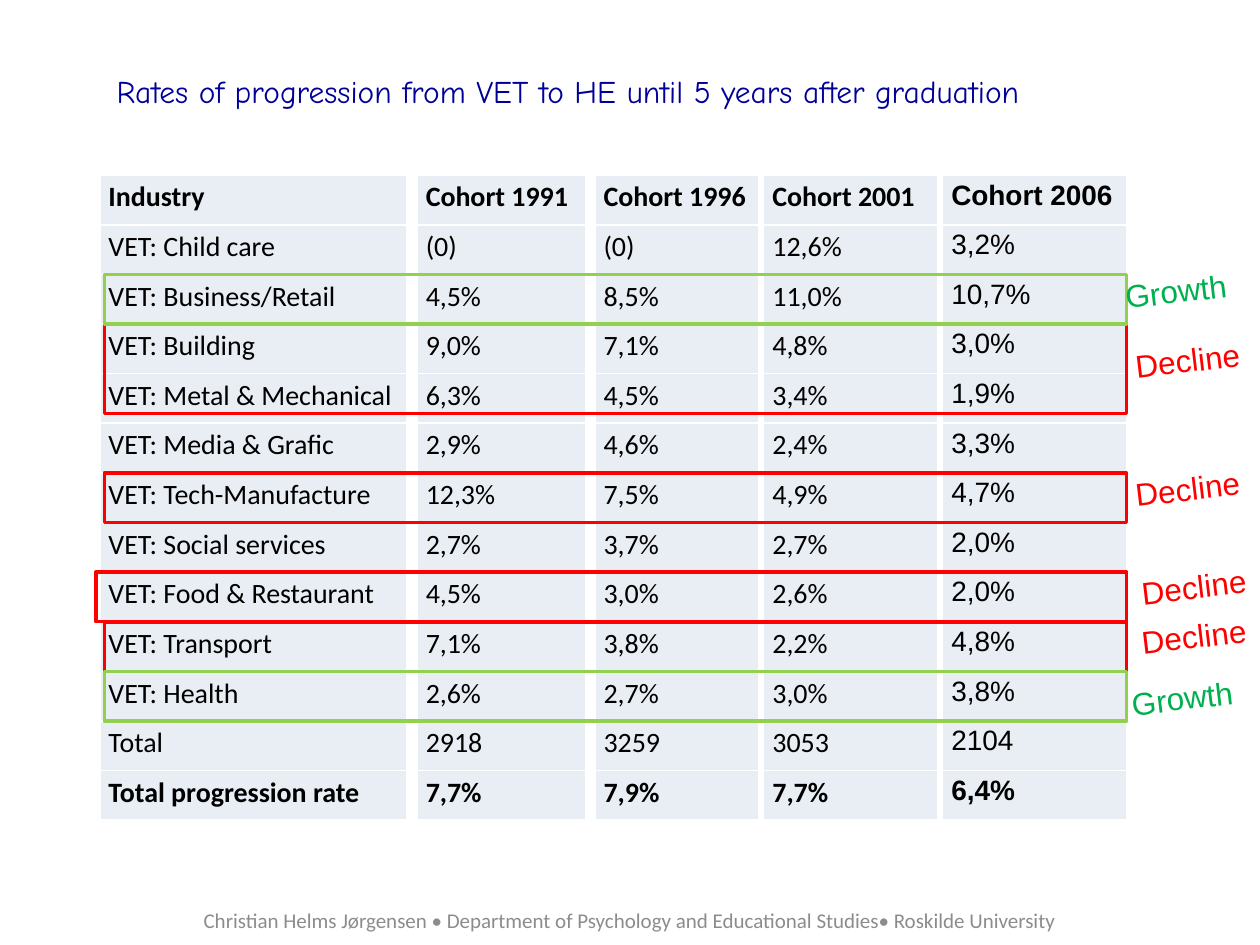
from dataclasses import dataclass

import pptx
import pptx.dml.color
import pptx.enum.shapes
import pptx.enum.text
import pptx.oxml
import pptx.oxml.ns
import pptx.util

Pt = pptx.util.Pt
MSO_ANCHOR = pptx.enum.text.MSO_ANCHOR
PP_ALIGN = pptx.enum.text.PP_ALIGN


@dataclass(frozen=True)
class Theme:
    body_font: str = "Calibri"
    accent_font: str = "Arial"
    title_font: str = "Comic Neue"
    title_size: int = 18
    cell_size: int = 16
    label_size: int = 18
    footer_size: int = 12
    title_color: str = "000099"
    text_color: str = "000000"
    footer_color: str = "8C8C8C"
    cell_fill: str = "E9EDF4"
    border_color: str = "FFFFFF"


THEME = Theme()

# label: (outline colour, label colour, label width)
TRENDS = {
    "Decline": ("FF0000", "FF0000", 80),
    "Growth": ("92D050", "00B050", 78.5),
}

TABLE_TOP, ROW_HEIGHT = 100.1, 28.36
HIGHLIGHT_RIGHT = 643.7

INDUSTRIES = [
    "Industry", "VET: Child care", "VET: Business/Retail", "VET: Building",
    "VET: Metal & Mechanical", "VET: Media & Grafic", "VET: Tech-Manufacture",
    "VET: Social services", "VET: Food & Restaurant", "VET: Transport",
    "VET: Health", "Total", "Total progression rate",
]
COHORT_1991 = ["Cohort 1991", "(0)", "4,5%", "9,0%", "6,3%", "2,9%", "12,3%",
               "2,7%", "4,5%", "7,1%", "2,6%", "2918", "7,7%"]
COHORT_1996 = ["Cohort 1996", "(0)", "8,5%", "7,1%", "4,5%", "4,6%", "7,5%",
               "3,7%", "3,0%", "3,8%", "2,7%", "3259", "7,9%"]
COHORT_2001 = ["Cohort 2001", "12,6%", "11,0%", "4,8%", "3,4%", "2,4%", "4,9%",
               "2,7%", "2,6%", "2,2%", "3,0%", "3053", "7,7%"]
COHORT_2006 = ["Cohort 2006", "3,2%", "10,7%", "3,0%", "1,9%", "3,3%", "4,7%",
               "2,0%", "2,0%", "4,8%", "3,8%", "2104", "6,4%"]

# left, width, font, entries
COLUMNS = [
    (57, 175.7, THEME.body_font, INDUSTRIES),
    (238.3, 96.5, THEME.body_font, COHORT_1991),
    (339.9, 93.6, THEME.body_font, COHORT_1996),
    (436.4, 99.2, THEME.body_font, COHORT_2001),
    (538.6, 105.1, THEME.accent_font, COHORT_2006),
]

# trend, first row, rows spanned, outline left, label left, label top
HIGHLIGHTS = [
    ("Decline", 3, 1.8, 59.6, 641.5, 190.8),
    ("Decline", 6, 1, 59.6, 641.5, 264.2),
    ("Decline", 9, 1, 59.6, 645.1, 348.5),
    ("Decline", 8, 1, 54.8, 645.1, 320.4),
    ("Growth", 2, 1, 59.6, 635.8, 151.2),
    ("Growth", 10, 1, 59.6, 639.4, 383.8),
]


def rgb(color):
    return pptx.dml.color.RGBColor.from_string(color)


def points(box):
    return [Pt(length) for length in box]


def style_runs(paragraph, font_name, size, color, bold=False):
    for run in paragraph.runs:
        run.font.name = font_name
        run.font.size = Pt(size)
        run.font.color.rgb = rgb(color)
        run.font.bold = bold


def add_text(slide, box, text, font_name, size, color, wrap=True):
    shape = slide.shapes.add_textbox(*points(box))
    shape.text_frame.word_wrap = wrap
    shape.text_frame.text = text
    style_runs(shape.text_frame.paragraphs[0], font_name, size, color)
    return shape


def add_title(slide, box):
    add_text(slide, box,
             "Rates of progression from VET to HE until 5 years after graduation",
             THEME.title_font, THEME.title_size, THEME.title_color)


def add_footer(slide, box):
    shape = add_text(
        slide, box,
        "Christian Helms Jørgensen • Department of Psychology and "
        "Educational Studies• Roskilde University",
        THEME.body_font, THEME.footer_size, THEME.footer_color)
    shape.text_frame.vertical_anchor = MSO_ANCHOR.MIDDLE
    shape.text_frame.paragraphs[0].alignment = PP_ALIGN.CENTER


def set_borders(cell, color, width):
    """Line all four sides; call before the fill, which must follow in the XML."""
    properties = cell._tc.get_or_add_tcPr()
    for side in ("lnL", "lnR", "lnT", "lnB"):
        properties.append(pptx.oxml.parse_xml(
            f'<a:{side} {pptx.oxml.ns.nsdecls("a")} w="{Pt(width)}">'
            f'<a:solidFill><a:srgbClr val="{color}"/></a:solidFill></a:{side}>'))


def add_column_table(slide, box, font_name, entries):
    """One single-column table whose first and last entries are bold."""
    table = slide.shapes.add_table(len(entries), 1, *points(box)).table
    for index, entry in enumerate(entries):
        table.rows[index].height = Pt(box[3] / len(entries))
        cell = table.cell(index, 0)
        cell.margin_left = cell.margin_right = Pt(5)
        cell.margin_top = cell.margin_bottom = 0
        set_borders(cell, THEME.border_color, 1)
        cell.fill.solid()
        cell.fill.fore_color.rgb = rgb(THEME.cell_fill)
        cell.text_frame.text = entry
        paragraph = cell.text_frame.paragraphs[0]
        paragraph.line_spacing = 1.15
        style_runs(paragraph, font_name, THEME.cell_size, THEME.text_color,
                   bold=index in (0, len(entries) - 1))


def add_outline(slide, box, color):
    shape = slide.shapes.add_shape(
        pptx.enum.shapes.MSO_SHAPE.RECTANGLE, *points(box))
    shape.shadow.inherit = False
    shape.fill.background()
    shape.line.color.rgb = rgb(color)
    shape.line.width = Pt(2)


def add_trend_label(slide, box, text, color):
    shape = add_text(slide, box, text, THEME.accent_font, THEME.label_size,
                     color, wrap=False)
    shape.rotation = 353.1


def add_highlights(slide, top, row_height):
    for trend, row, span, left, label_left, label_top in HIGHLIGHTS:
        outline_color, label_color, label_width = TRENDS[trend]
        add_outline(slide, (left, top + row * row_height,
                            HIGHLIGHT_RIGHT - left, span * row_height),
                    outline_color)
        add_trend_label(slide, (label_left, label_top, label_width, 29),
                        trend, label_color)


def main():
    presentation = pptx.Presentation()
    presentation.slide_width, presentation.slide_height = Pt(720), Pt(540)
    slide = presentation.slides.add_slide(presentation.slide_layouts[6])
    add_footer(slide, (0, 511, 720, 29))
    for left, width, font_name, entries in COLUMNS:
        add_column_table(
            slide, (left, TABLE_TOP, width, ROW_HEIGHT * len(entries)),
            font_name, entries)
    add_title(slide, (59.6, 37.6, 607, 29))
    add_highlights(slide, TABLE_TOP, ROW_HEIGHT)
    presentation.save("out.pptx")


if __name__ == "__main__":
    main()
